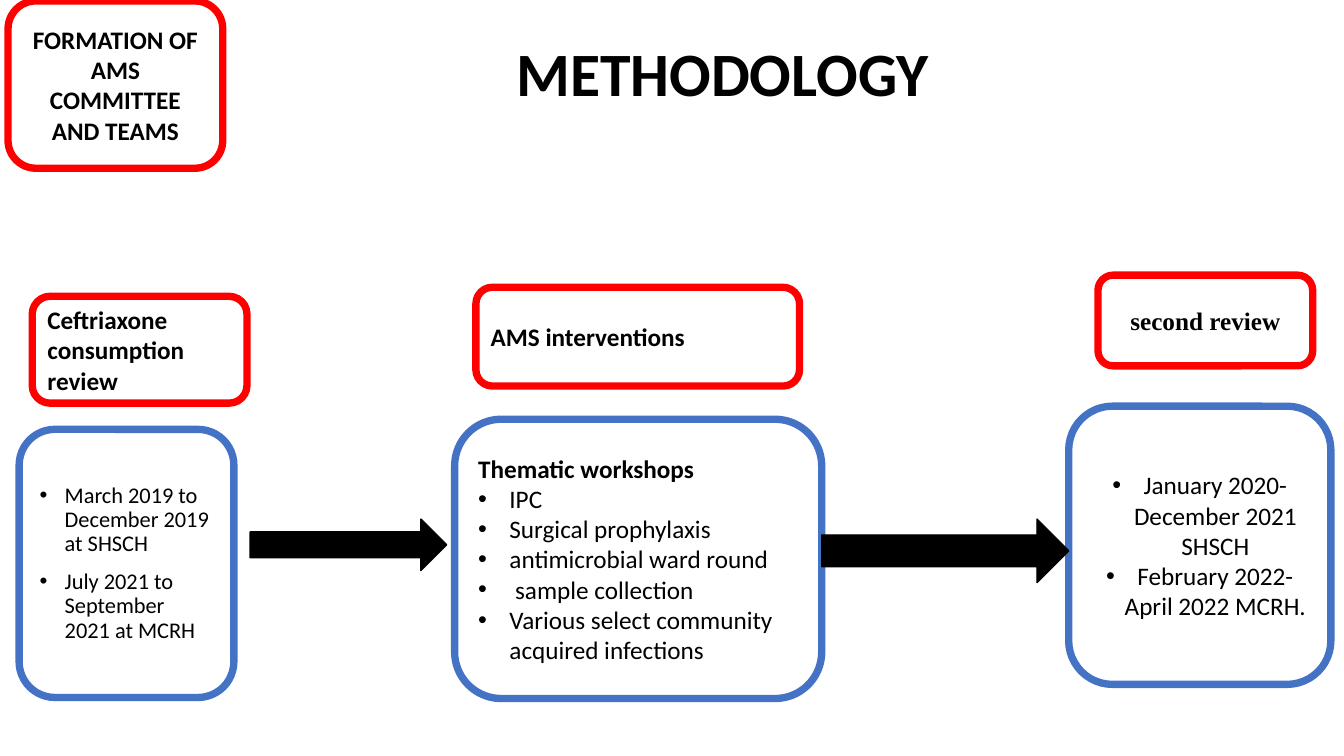
import pptx
import pptx.util
import pptx.dml.color
import pptx.enum.shapes
import pptx.enum.text
import pptx.oxml
import pptx.oxml.ns

PX = 9144  # EMU per px, 100 px to the inch
HUES = {"ink": "000000", "head": "FF0000", "step": "4472C4"}
ALIGN = pptx.enum.text.PP_ALIGN
KIND = pptx.enum.shapes.MSO_SHAPE


def tint(name):
    return pptx.dml.color.RGBColor.from_string(HUES[name])


class Deck:
    text = {"name": "Calibri", "size": pptx.util.Pt(18), "bold": False}

    def __init__(self, wide, high):
        self.prs = pptx.Presentation()
        self.prs.slide_width, self.prs.slide_height = wide * PX, high * PX
        self.slide = self.prs.slides.add_slide(self.prs.slide_layouts[5])

    def place(self, shape, spot):
        for key, val in zip(("left", "top", "width", "height"), spot):
            setattr(shape, key, val * PX)

    def frame(self, shape):
        frame = shape.text_frame
        form = {"word_wrap": True,
                "auto_size": pptx.enum.text.MSO_AUTO_SIZE.NONE,
                "vertical_anchor": pptx.enum.text.MSO_ANCHOR.MIDDLE}
        for key, val in form.items():
            setattr(frame, key, val)
        return frame

    def label(self, para, words, font, form):
        run = para.add_run()
        run.text = words
        for key, val in {**self.text, **font}.items():
            setattr(run.font, key, val)
        run.font.color.rgb = tint("ink")
        for key, val in {"alignment": ALIGN.LEFT, **form}.items():
            setattr(para, key, val)

    def bullet(self, para, dent):
        props = para._p.get_or_add_pPr()
        props.set("marL", str(dent * PX))
        props.set("indent", str(-dent * PX))
        for tag, key, val in (("buFont", "typeface", "Arial"), ("buChar", "char", "•")):
            item = pptx.oxml.ns.qn("a:" + tag)
            props.append(props.makeelement(item, {key: val}))

    def title(self, words, spot):
        shape = self.slide.shapes.title
        self.place(shape, spot)
        para = self.frame(shape).paragraphs[0]
        self.label(para, words, {"size": pptx.util.Pt(44), "bold": True},
                   {"line_spacing": 0.9})

    def shape(self, kind, spot, hue, line):
        shape = self.slide.shapes.add_shape(kind, *(n * PX for n in spot))
        shape.shadow.inherit = False
        shape.fill.background()
        shape.line.color.rgb = tint(hue)
        shape.line.width = pptx.util.Pt(line)
        return shape

    def box(self, spot, hue, lead="", items=(), font={}, form={}, dent=31):
        frame = self.frame(self.shape(KIND.ROUNDED_RECTANGLE, spot, hue, 5.25))
        rows = ([lead] if lead else []) + list(items)
        for num, words in enumerate(rows):
            para = frame.paragraphs[0] if num == 0 else frame.add_paragraph()
            bold = {"bold": words == lead}
            self.label(para, words, {**bold, **font}, form)
            if words != lead:
                self.bullet(para, dent)

    def arrow(self, spot):
        shape = self.shape(KIND.RIGHT_ARROW, spot, "ink", 1)
        shape.fill.solid()
        shape.fill.fore_color.rgb = tint("ink")


def main():
    deck = Deck(1333, 750)
    mid = {"alignment": ALIGN.CENTER}

    deck.title("METHODOLOGY", (502, 31, 809, 90))

    # Steps
    deck.box((19, 426, 213, 266), "step", dent=25,
             items=("March 2019 to December 2019 at SHSCH",
                    "July 2021 to September 2021 at MCRH"),
             font={"size": pptx.util.Pt(16)},
             form={"line_spacing": 0.9, "space_before": pptx.util.Pt(10)})
    deck.box((1060, 403, 260, 276), "step", form=mid,
             items=("January 2020- December 2021 SHSCH",
                    "February 2022- April 2022 MCRH."))
    deck.box((451, 416, 364, 277), "step", "Thematic workshops",
             ("IPC", "Surgical prophylaxis", "antimicrobial ward round",
              " sample collection",
              "Various select community acquired infections"))

    # Headings
    deck.box((8, 1, 213, 166), "head", "FORMATION OF AMS COMMITTEE AND TEAMS", form=mid)
    deck.box((1089, 273, 213, 90), "head", "second review",
             font={"name": "Times New Roman"}, form=mid)
    deck.box((472, 285, 321, 98), "head", "AMS interventions")
    deck.box((32, 294, 213, 106), "head", "Ceftriaxone consumption review")

    # Arrows between steps
    for spot in ((248, 515, 195, 51), (815, 515, 245, 63)):
        deck.arrow(spot)

    deck.prs.save("out.pptx")


if __name__ == "__main__":
    main()
